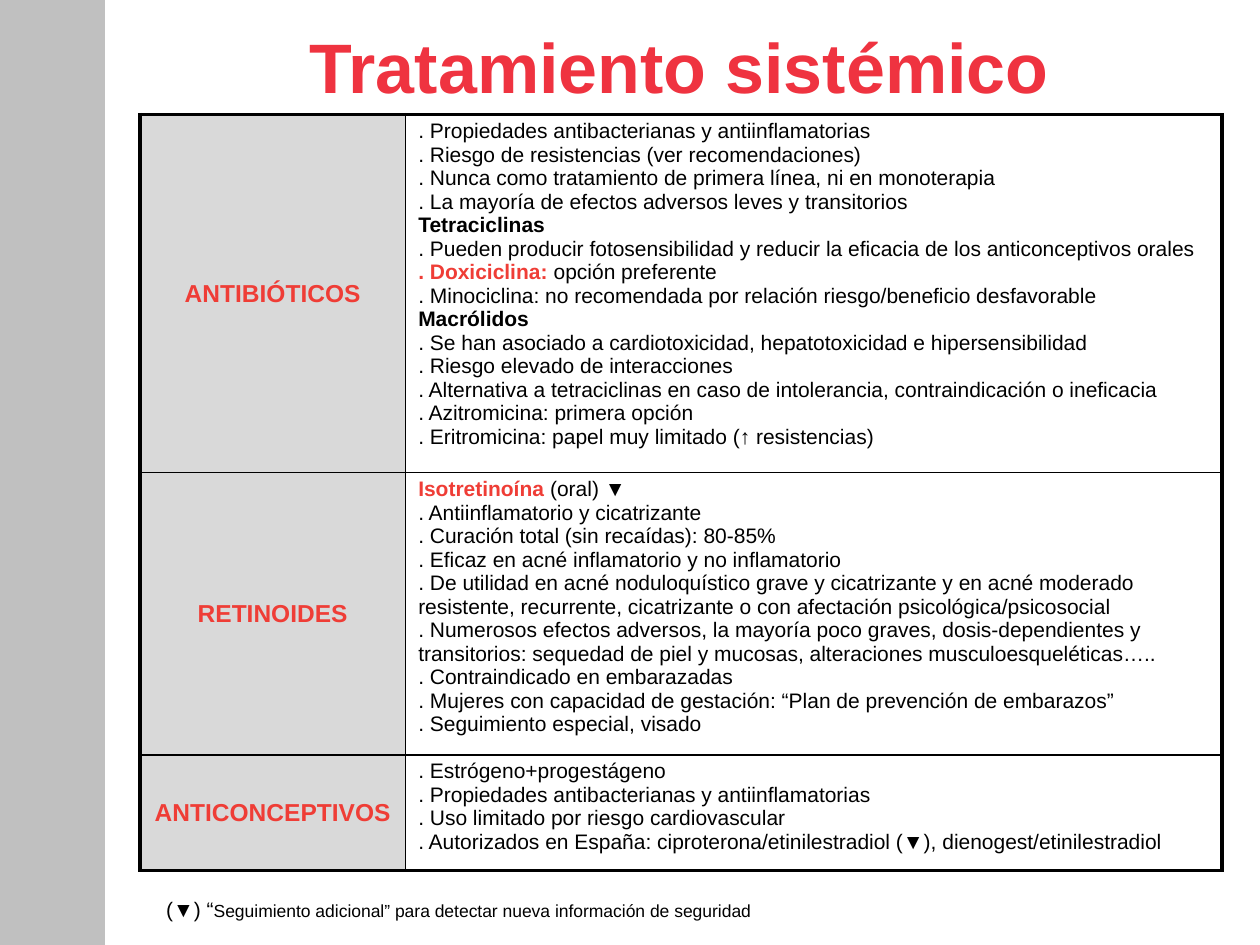
from lxml import etree
from pptx import Presentation
from pptx.dml.color import RGBColor
from pptx.enum.shapes import MSO_SHAPE
from pptx.enum.text import MSO_ANCHOR, PP_ALIGN
from pptx.oxml.ns import qn
from pptx.util import Inches, Pt

RED, LABEL_RED = "EF3340", "EF3D36"
BLACK, WHITE, LABEL_GRAY, BAND_GRAY = "000000", "FFFFFF", "D9D9D9", "C0C0C0"

BOLD = {"bold": True}
KEY = {"bold": True, "color": LABEL_RED}

# Each row: label, height, lines; a line is a list of (text, format) runs
ROWS = [
    ("ANTIBIÓTICOS", 2.83, [
        [(". Propiedades antibacterianas y antiinflamatorias", {})],
        [(". Riesgo de resistencias (ver recomendaciones)", {})],
        [(". Nunca como tratamiento de primera línea, ni en monoterapia", {})],
        [(". La mayoría de efectos adversos leves y transitorios", {})],
        [("Tetraciclinas", BOLD)],
        [(". Pueden producir fotosensibilidad y reducir la eficacia de los "
          "anticonceptivos orales", {})],
        [(". Doxiciclina: ", KEY), ("opción preferente", {})],
        [(". Minociclina: no recomendada por relación riesgo/beneficio desfavorable", {})],
        [("Macrólidos", BOLD)],
        [(". Se han asociado a cardiotoxicidad, hepatotoxicidad e hipersensibilidad", {})],
        [(". Riesgo elevado de interacciones", {})],
        [(". Alternativa a tetraciclinas en caso de intolerancia, "
          "contraindicación o ineficacia", {})],
        [(". Azitromicina: primera opción", {})],
        [(". Eritromicina: papel muy limitado (↑ resistencias)", {})],
    ]),
    ("RETINOIDES", 2.24, [
        [("Isotretinoína ", KEY), ("(oral) ▼", {})],
        [(". Antiinflamatorio y cicatrizante", {})],
        [(". Curación total (sin recaídas): 80-85%", {})],
        [(". Eficaz en acné inflamatorio y no inflamatorio", {})],
        [(". De utilidad en acné noduloquístico grave y cicatrizante y en acné moderado "
          "resistente, recurrente, cicatrizante o con afectación "
          "psicológica/psicosocial", {})],
        [(". Numerosos efectos adversos, la mayoría poco graves, dosis-dependientes y "
          "transitorios: sequedad de piel y mucosas, alteraciones "
          "musculoesqueléticas…..", {})],
        [(". Contraindicado en embarazadas", {})],
        [(". Mujeres con capacidad de gestación: “Plan de prevención de embarazos”", {})],
        [(". Seguimiento especial, visado", {})],
    ]),
    ("ANTICONCEPTIVOS", 0.92, [
        [(". Estrógeno+progestágeno", {})],
        [(". Propiedades antibacterianas y antiinflamatorias", {})],
        [(". Uso limitado por riesgo cardiovascular", {})],
        [(". Autorizados en España: ciproterona/etinilestradiol (▼), "
          "dienogest/etinilestradiol", {})],
    ]),
]


def rgb(value):
    return RGBColor.from_string(value)


def add_text(p, text, size=12, color=BLACK, font="Arial", bold=False):
    r = p.add_run()
    r.text = text
    r.font.size, r.font.name, r.font.bold = Pt(size), font, bold
    r.font.color.rgb = rgb(color)


def add_box(s, left, top, width, height, wrap=True, anchor=MSO_ANCHOR.TOP):
    sp = s.shapes.add_textbox(Inches(left), Inches(top), Inches(width), Inches(height))
    sp.text_frame.word_wrap = wrap
    sp.text_frame.vertical_anchor = anchor
    return sp


def set_borders(cell, **widths):
    """Draw black edges; widths are points keyed by L, R, T and B, in that order."""
    tcPr = cell._tc.get_or_add_tcPr()
    for i, (side, width) in enumerate(widths.items()):
        ln = etree.Element(qn(f"a:ln{side}"), w=str(Pt(width)))
        fill = etree.SubElement(ln, qn("a:solidFill"))
        etree.SubElement(fill, qn("a:srgbClr"), val=BLACK)
        tcPr.insert(i, ln)


def add_side_band(s, left, top, width, height):
    sp = s.shapes.add_shape(MSO_SHAPE.RECTANGLE, Inches(left), Inches(top),
                            Inches(width), Inches(height))
    sp.shadow.inherit = False
    sp.fill.solid()
    sp.fill.fore_color.rgb = rgb(BAND_GRAY)
    sp.line.color.rgb = rgb(BAND_GRAY)
    sp.line.width = Pt(0.75)


def add_title(s, left, top, width, height):
    box = add_box(s, left, top, width, height, anchor=MSO_ANCHOR.MIDDLE)
    p = box.text_frame.paragraphs[0]
    p.alignment = PP_ALIGN.CENTER
    add_text(p, "Tratamiento sistémico", size=40, color=RED, bold=True)


def add_treatment_table(s, left, top, label_width, detail_width):
    height = sum(row[1] for row in ROWS)
    table = s.shapes.add_table(len(ROWS), 2, Inches(left), Inches(top),
                               Inches(label_width + detail_width), Inches(height)).table
    table.first_row = table.horz_banding = False
    table.columns[0].width = Inches(label_width)
    table.columns[1].width = Inches(detail_width)

    for i, (label, row_height, lines) in enumerate(ROWS):
        table.rows[i].height = Inches(row_height)
        name, detail = table.cell(i, 0), table.cell(i, 1)

        # Heavy outer frame, thin inner rules
        edges = {"T": 2.25 if i == 0 else 1, "B": 2.25 if i == len(ROWS) - 1 else 1}
        for cell, fill, sides in ((name, LABEL_GRAY, {"L": 2.25, "R": 1}),
                                  (detail, WHITE, {"L": 1, "R": 2.25})):
            cell.fill.solid()
            cell.fill.fore_color.rgb = rgb(fill)
            set_borders(cell, **sides, **edges)

        name.vertical_anchor = MSO_ANCHOR.MIDDLE
        p = name.text_frame.paragraphs[0]
        p.alignment = PP_ALIGN.CENTER
        add_text(p, label, size=14, **KEY)

        # Tight margins keep the rows at their set heights
        detail.margin_top, detail.margin_bottom = Inches(0.04), Inches(0)
        tf = detail.text_frame
        for j, runs in enumerate(lines):
            p = tf.add_paragraph() if j else tf.paragraphs[0]
            for text, style in runs:
                add_text(p, text, **style)


def add_footnote(s, left, top, width, height):
    p = add_box(s, left, top, width, height, wrap=False).text_frame.paragraphs[0]
    add_text(p, "(▼) “")
    add_text(p, "Seguimiento adicional” para detectar nueva información de seguridad", size=10)


def main():
    prs = Presentation()
    prs.slide_width, prs.slide_height = Inches(10), Inches(7.5)
    s = prs.slides.add_slide(prs.slide_layouts[6])
    add_side_band(s, 0, 0, 0.83, 7.5)
    add_title(s, 1.08, 0.13, 8.62, 0.78)
    add_treatment_table(s, 1.11, 0.91, 2.11, 6.48)
    add_footnote(s, 1.22, 7.07, 4.87, 0.3)
    prs.save("out.pptx")


if __name__ == "__main__":
    main()
